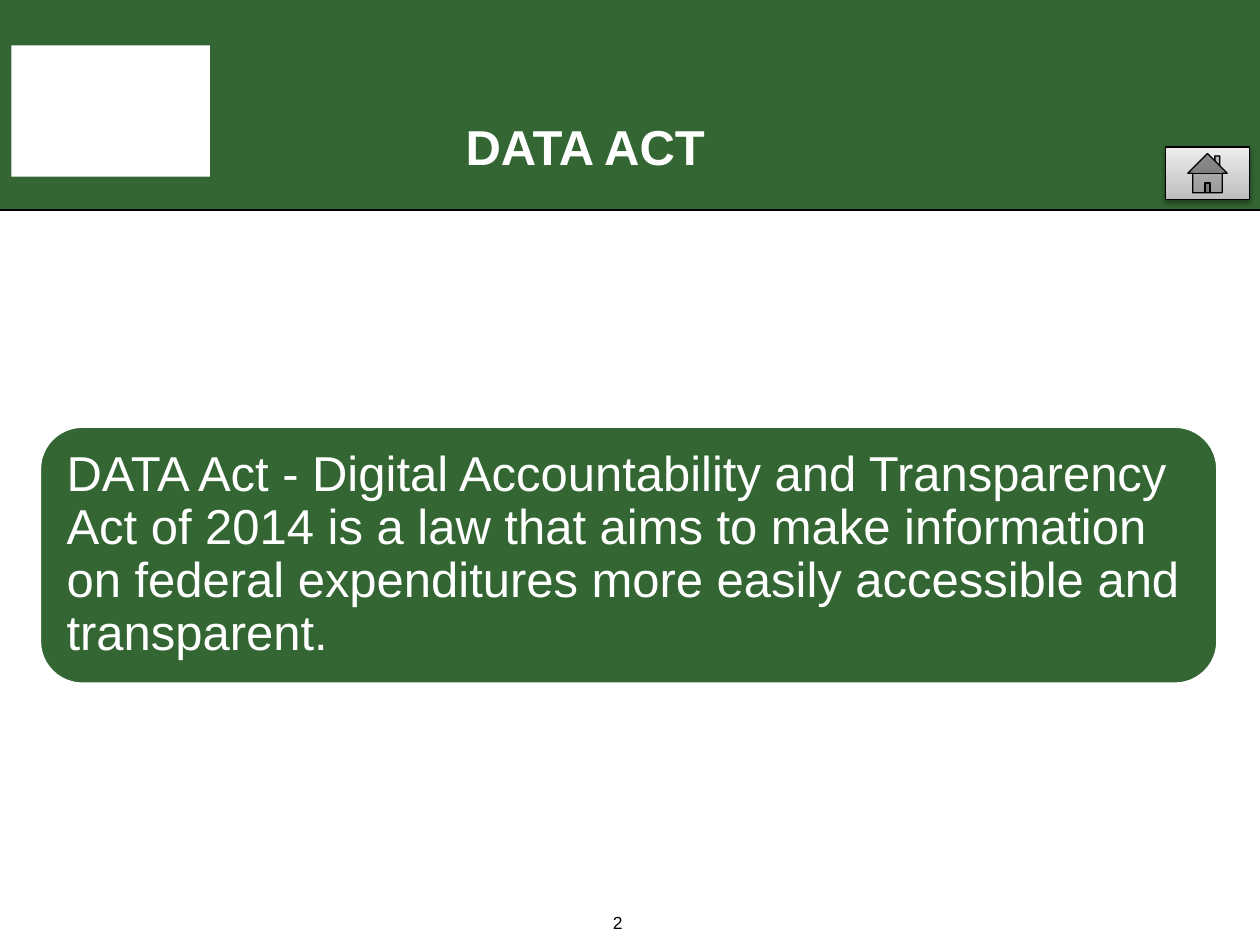
from lxml import etree
from pptx import Presentation
from pptx.dml.color import RGBColor
from pptx.enum.shapes import MSO_CONNECTOR, MSO_SHAPE
from pptx.enum.text import MSO_ANCHOR, PP_ALIGN
from pptx.oxml.ns import qn
from pptx.util import Pt

GREEN = RGBColor(0x33, 0x66, 0x33)
WHITE = RGBColor(0xFF, 0xFF, 0xFF)
BLACK = RGBColor(0, 0, 0)
DARK = RGBColor(0xBD, 0xBD, 0xBD)
LIGHT = RGBColor(0xEE, 0xEE, 0xEE)

RECT = MSO_SHAPE.RECTANGLE
ROUND = MSO_SHAPE.ROUNDED_RECTANGLE
HOME = MSO_SHAPE.ACTION_BUTTON_HOME
STRAIGHT = MSO_CONNECTOR.STRAIGHT
BOTTOM, MIDDLE = MSO_ANCHOR.BOTTOM, MSO_ANCHOR.MIDDLE
LEFT, CENTER = PP_ALIGN.LEFT, PP_ALIGN.CENTER

WIDTH, HEIGHT = 720, 540
BAND = 120
BODY = (
    "DATA Act - Digital Accountability and Transparency Act of 2014 is a law "
    "that aims to make information on federal expenditures more easily "
    "accessible and transparent."
)


def add_block(slide, kind, box, fill=None, line=None, weight=0.75):
    shape = slide.shapes.add_shape(kind, *map(Pt, box))
    shape.shadow.inherit = False
    if fill is not None:
        shape.fill.solid()
        shape.fill.fore_color.rgb = fill
    if line is None:
        shape.line.fill.background()
    else:
        shape.line.color.rgb = line
        shape.line.width = Pt(weight)
    return shape


def add_rule(slide, y):
    rule = slide.shapes.add_connector(STRAIGHT, 0, Pt(y), Pt(WIDTH), Pt(y))
    rule.line.color.rgb = BLACK
    rule.line.width = Pt(0.75)
    etree.SubElement(rule._element.spPr, qn("a:effectLst"))


def add_home(slide, box):
    """Add a home button with a grey gradient and a soft shadow below."""
    home = add_block(slide, HOME, box, line=BLACK)
    home.fill.gradient()
    home.fill.gradient_angle = 90
    for stop, color in zip(home.fill.gradient_stops, (DARK, LIGHT)):
        stop.color.rgb = color
    effects = home._element.spPr.find(qn("a:effectLst"))
    shadow = etree.SubElement(
        effects, qn("a:outerShdw"), blurRad=str(Pt(3.1)), dist=str(Pt(1.6)),
        dir="5400000", rotWithShape="0")
    color = etree.SubElement(shadow, qn("a:srgbClr"), val=str(BLACK))
    etree.SubElement(color, qn("a:alpha"), val="38000")


def set_text(shape, text, size, color, anchor, align=LEFT, bold=False):
    frame = shape.text_frame
    frame.word_wrap = True
    frame.vertical_anchor = anchor
    frame.text = text
    para = frame.paragraphs[0]
    para.alignment = align
    font = para.runs[0].font
    font.name, font.size, font.bold = "Arial", Pt(size), bold
    font.color.rgb = color
    return para


def add_header(slide):
    add_block(slide, RECT, (0, 0, WIDTH, BAND), GREEN)
    add_rule(slide, BAND)
    add_block(slide, RECT, (6.5, 26, 113.5, 75), WHITE)
    add_home(slide, (666, 84, 48, 30))
    title = slide.shapes.add_textbox(Pt(127), Pt(16.5), Pt(457), Pt(87))
    para = set_text(title, "DATA ACT", 28, WHITE, BOTTOM, bold=True)
    para._p.get_or_add_pPr().set("marL", str(Pt(132)))


def add_panel(slide):
    panel = add_block(slide, ROUND, (22.5, 243.5, 673.5, 147.5), GREEN, WHITE, 2)
    para = set_text(panel, BODY, 28, WHITE, MIDDLE)
    para.line_spacing = 0.9
    para.space_after = Pt(9.8)
    frame = panel.text_frame
    frame.margin_left = frame.margin_right = Pt(8.4)
    frame.margin_top = frame.margin_bottom = Pt(8.4)


def add_number(slide):
    box = slide.shapes.add_textbox(Pt(286.5), Pt(524), Pt(133), Pt(12.5))
    set_text(box, "2", 10, BLACK, BOTTOM, CENTER)


def main():
    deck = Presentation()
    deck.slide_width, deck.slide_height = Pt(WIDTH), Pt(HEIGHT)
    slide = deck.slides.add_slide(deck.slide_layouts[6])
    add_header(slide)
    add_panel(slide)
    add_number(slide)
    deck.save("out.pptx")


if __name__ == "__main__":
    main()
